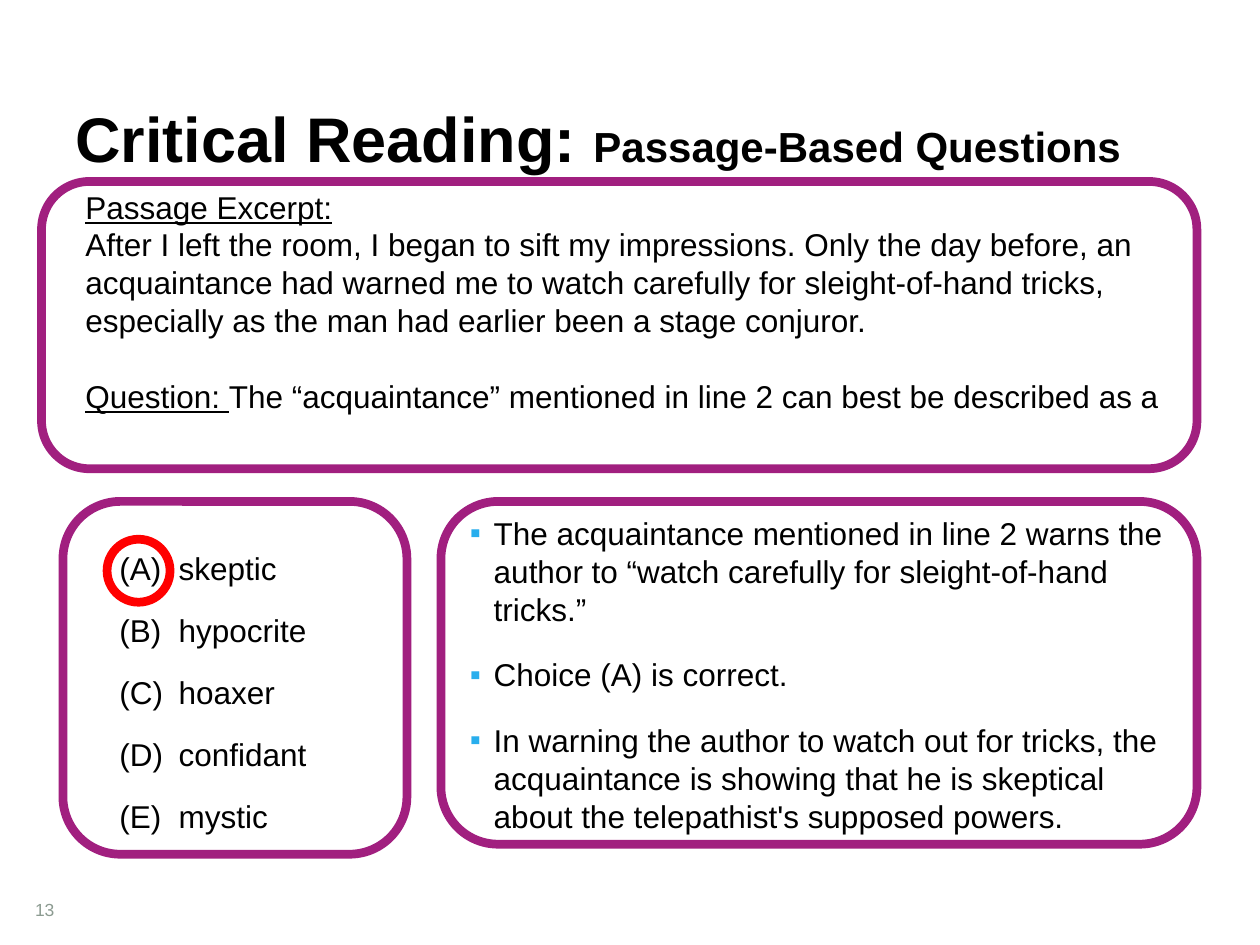
from dataclasses import dataclass
from typing import NamedTuple

from lxml import etree
from pptx import Presentation
from pptx.dml.color import RGBColor
from pptx.enum import shapes, text
from pptx.oxml import ns
from pptx.util import Inches, Pt


@dataclass(frozen=True)
class Theme:
    font: str = "Arial"
    ink: str = "000000"
    paper: str = "FFFFFF"
    frame: str = "A11F7F"
    ring: str = "FF0000"
    bullet: str = "28AEED"
    muted: str = "8C9B91"
    title: int = 36
    subtitle: int = 24
    body: int = 18
    number: int = 10
    outline: int = 5
    paper_opacity: int = 85


class Box(NamedTuple):
    left: float
    top: float
    width: float
    height: float

    def lengths(self) -> list:
        return [Inches(side) for side in self]


class Run(NamedTuple):
    words: str
    size: int
    bold: bool = False
    underline: bool = False


THEME = Theme()
PANELS = [
    Box(0.5, 3.98, 2.73, 2.8),
    Box(3.5, 3.98, 6, 2.72),
    Box(0.33, 1.44, 9.17, 2.28),
]
TITLE = [[
    Run("Critical Reading: ", THEME.title, bold=True),
    Run("Passage-Based Questions", THEME.subtitle, bold=True),
]]
PASSAGE = [
    [Run("Passage Excerpt:", THEME.body, underline=True)],
    [Run("After I left the room, I began to sift my impressions. Only the day "
         "before, an acquaintance had warned me to watch carefully for "
         "sleight-of-hand tricks, especially as the man had earlier been a "
         "stage conjuror.", THEME.body)],
]
QUESTION = [
    Run("Question: ", THEME.body, underline=True),
    Run("The “acquaintance” mentioned in line 2 can best be described as a",
        THEME.body),
]
CHOICES = ["skeptic", "hypocrite", "hoaxer", "confidant", "mystic"]
REASONS = [
    "The acquaintance mentioned in line 2 warns the author to “watch "
    "carefully for sleight-of-hand tricks.”",
    "Choice (A) is correct.",
    "In warning the author to watch out for tricks, the acquaintance is "
    "showing that he is skeptical about the telepathist's supposed powers.",
]


def add_outline(slide, kind, box: Box, color: str, filled: bool) -> None:
    outline = slide.shapes.add_shape(kind, *box.lengths())
    outline.shadow.inherit = False
    outline.line.color.rgb = RGBColor.from_string(color)
    outline.line.width = Pt(THEME.outline)
    if not filled:
        outline.fill.background()
        return
    outline.fill.solid()
    outline.fill.fore_color.rgb = RGBColor.from_string(THEME.paper)
    paper = outline.fill._xPr.find(".//" + ns.qn("a:srgbClr"))
    etree.SubElement(paper, ns.qn("a:alpha"),
                     val=str(THEME.paper_opacity * 1000))


def set_hanging(paragraph, indent: float, hang: float, bullet: str) -> None:
    """Indent a paragraph; an empty bullet leaves a tab stop for its label."""
    props = paragraph._p.get_or_add_pPr()
    props.set("marL", str(Inches(indent)))
    props.set("indent", str(-Inches(hang)))
    if bullet:
        color = etree.SubElement(props, ns.qn("a:buClr"))
        etree.SubElement(color, ns.qn("a:srgbClr"), val=THEME.bullet)
        etree.SubElement(props, ns.qn("a:buFont"), typeface=THEME.font)
        etree.SubElement(props, ns.qn("a:buChar"), char=bullet)
    else:
        stops = etree.SubElement(props, ns.qn("a:tabLst"))
        etree.SubElement(stops, ns.qn("a:tab"),
                         pos=str(Inches(indent)), algn="l")


def add_text(slide, box: Box, paragraphs: list, *, color: str = THEME.ink,
             anchor=text.MSO_ANCHOR.TOP, gap: float = 0,
             line_spacing: float = 1, indent: float = 0, hang: float = 0,
             bullet: str = ""):
    frame = slide.shapes.add_textbox(*box.lengths()).text_frame
    frame.word_wrap = True
    frame.vertical_anchor = anchor
    for index, runs in enumerate(paragraphs):
        paragraph = frame.add_paragraph() if index else frame.paragraphs[0]
        if indent:
            set_hanging(paragraph, indent, hang, bullet)
        paragraph.line_spacing = line_spacing
        paragraph.space_before = Pt(gap if index else 0)
        for run in runs:
            piece = paragraph.add_run()
            piece.text = run.words
            piece.font.name = THEME.font
            piece.font.size = Pt(run.size)
            piece.font.bold = run.bold
            piece.font.underline = run.underline
            piece.font.color.rgb = RGBColor.from_string(color)
    return frame


def main() -> None:
    deck = Presentation()
    deck.slide_width, deck.slide_height = Inches(10), Inches(7.5)
    slide = deck.slides.add_slide(deck.slide_layouts[6])

    add_text(slide, Box(0.18, 6.95, 0.64, 0.4), [[Run("13", THEME.number)]],
             color=THEME.muted, anchor=text.MSO_ANCHOR.BOTTOM)
    for panel in PANELS:
        add_outline(slide, shapes.MSO_SHAPE.ROUNDED_RECTANGLE, panel,
                    THEME.frame, filled=True)
    add_text(slide, Box(0.5, 0.38, 9, 1.06), TITLE,
             anchor=text.MSO_ANCHOR.BOTTOM)
    add_outline(slide, shapes.MSO_SHAPE.OVAL, Box(0.85, 4.28, 0.5, 0.5),
                THEME.ring, filled=False)

    passage = add_text(slide, Box(0.58, 1.44, 8.83, 1.92),
                       PASSAGE + [QUESTION])
    passage.paragraphs[-1].space_before = Pt(1.2 * THEME.body)

    choices = [[Run(f"({letter})\t{word}", THEME.body)]
               for letter, word in zip("ABCDE", CHOICES)]
    add_text(slide, Box(0.85, 4.34, 2.16, 2.36), choices, gap=16,
             line_spacing=0.9, indent=0.47, hang=0.47)
    add_text(slide, Box(3.5, 4.03, 5.92, 2.67),
             [[Run(reason, THEME.body)] for reason in REASONS],
             gap=16, indent=0.32, hang=0.19, bullet="▪")

    deck.save("out.pptx")


if __name__ == "__main__":
    main()
